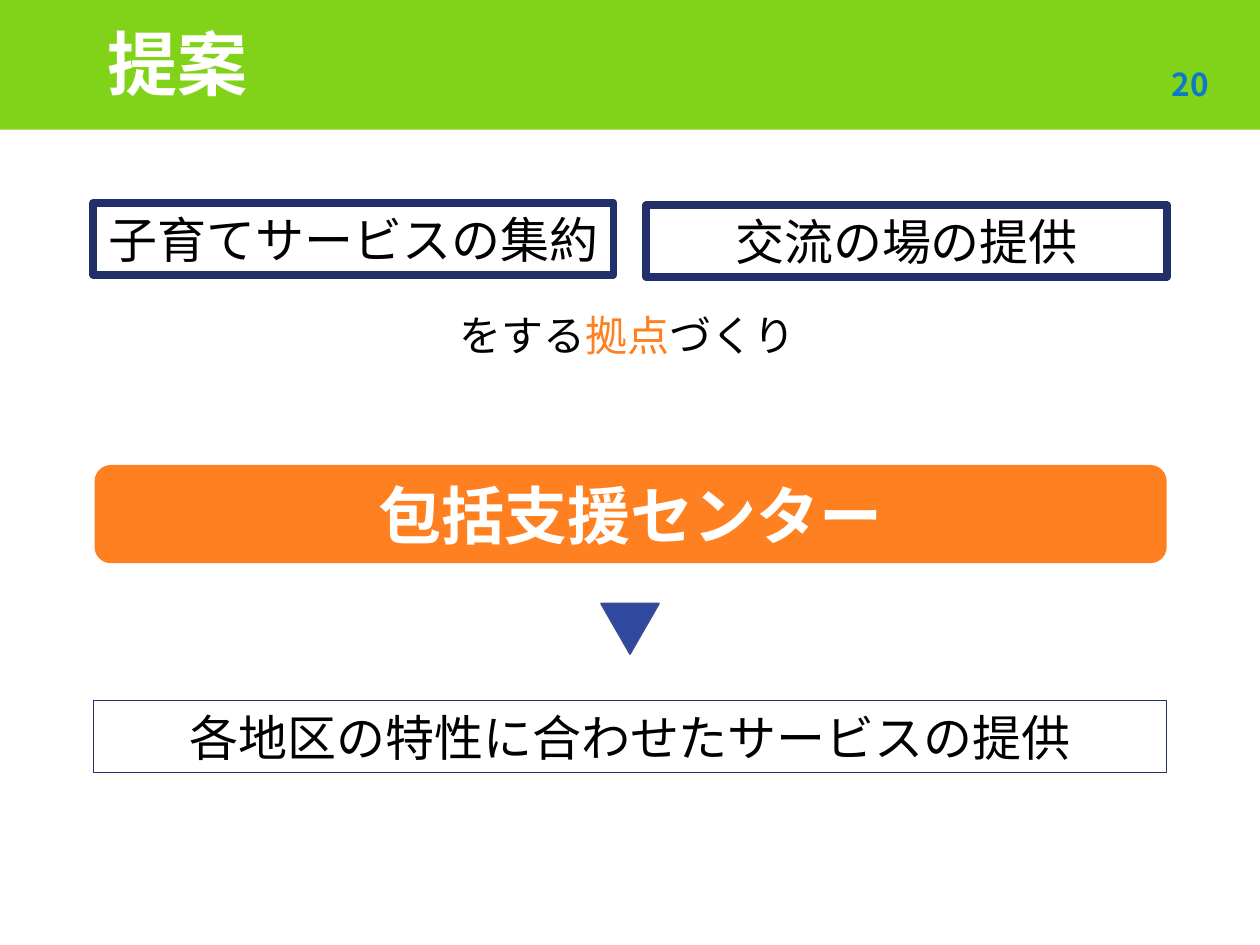
"""Build the proposal slide about a comprehensive support centre."""
from dataclasses import dataclass

from lxml.etree import SubElement
from pptx import Presentation
from pptx.dml.color import RGBColor
from pptx.enum.shapes import MSO_SHAPE as SHAPE
from pptx.enum.text import MSO_ANCHOR as ANCHOR, PP_ALIGN as ALIGN
from pptx.oxml.ns import qn
from pptx.util import Inches, Pt


@dataclass(frozen=True)
class Theme:
    font: str = "Noto Sans CJK JP"
    green: str = "81D31A"
    orange: str = "FF8021"
    navy: str = "21306A"
    blue: str = "31489F"
    blue_edge: str = "3A4C94"
    number: str = "0D79CA"
    white: str = "FFFFFF"
    black: str = "000000"
    title_size: int = 40
    center_size: int = 36
    box_size: int = 28
    lead_size: int = 24
    number_size: int = 18


T = Theme()


def add_shape(s, kind, at, fill=None, line=None, width=1):
    sp = s.shapes.add_shape(kind, *map(Inches, at))
    sp.shadow.inherit = False
    if fill:
        sp.fill.solid()
        sp.fill.fore_color.rgb = RGBColor.from_string(fill)
    else:
        sp.fill.background()
    if line:
        sp.line.color.rgb = RGBColor.from_string(line)
        sp.line.width = Pt(width)
    else:
        sp.line.fill.background()
    return sp


def write(sp, runs, size, bold=False, align=ALIGN.CENTER, wrap=True):
    tf = sp.text_frame
    tf.word_wrap = wrap
    tf.vertical_anchor = ANCHOR.MIDDLE
    p = tf.paragraphs[0]
    p.alignment = align
    for text, color in runs:
        r = p.add_run()
        r.text = text
        r.font.size = Pt(size)
        r.font.bold = bold
        r.font.color.rgb = RGBColor.from_string(color)
        r.font.name = T.font
        SubElement(r.font._element, qn("a:ea"), typeface=T.font)
    return tf


prs = Presentation()
prs.slide_width, prs.slide_height = Inches(10), Inches(7.5)
s = prs.slides.add_slide(prs.slide_layouts[5])

title = s.shapes.title
title.left, title.top = Inches(0.75), Inches(0.2)
title.width, title.height = Inches(8.5), Inches(0.7)
tf = write(title, [("提案", T.white)], T.title_size, True, ALIGN.LEFT)
tf.paragraphs[0].line_spacing = 0.85

band = add_shape(s, SHAPE.RECTANGLE, (0, 0, 10, 1.03), T.green)
title.element.addprevious(band.element)

number = s.shapes.add_textbox(Inches(9.25), Inches(0.45), Inches(0.49), Inches(0.43))
tf = write(number, [("20", T.number)], T.number_size, True, ALIGN.LEFT)
tf.margin_left, tf.margin_right = Inches(0.05), Inches(0.1)

center = add_shape(s, SHAPE.ROUNDED_RECTANGLE, (0.75, 3.69, 8.51, 0.78), T.orange)
write(center, [("包括支援センター", T.white)], T.center_size, True)

arrow = add_shape(s, SHAPE.ISOSCELES_TRIANGLE, (4.77, 4.79, 0.46, 0.4), T.blue, T.blue_edge)
arrow.rotation = 180

boxes = [
    ("各地区の特性に合わせたサービスの提供", 0.74, 5.56, 8.52, 0.75, True),
    ("子育てサービスの集約", 0.74, 1.61, 4.13, 4.5, False),
    ("交流の場の提供", 5.13, 1.63, 4.13, 4.5, True),
]
for text, x, y, w, line_width, wrap in boxes:
    box = add_shape(s, SHAPE.RECTANGLE, (x, y, w, 0.57), line=T.navy, width=line_width)
    write(box, [(text, T.black)], T.box_size, wrap=wrap)

lead = s.shapes.add_textbox(Inches(3.55), Inches(2.41), Inches(2.89), Inches(0.5))
runs = [("をする", T.black), ("拠点", T.orange), ("づくり", T.black)]
write(lead, runs, T.lead_size, align=ALIGN.LEFT, wrap=False)

prs.save("out.pptx")
